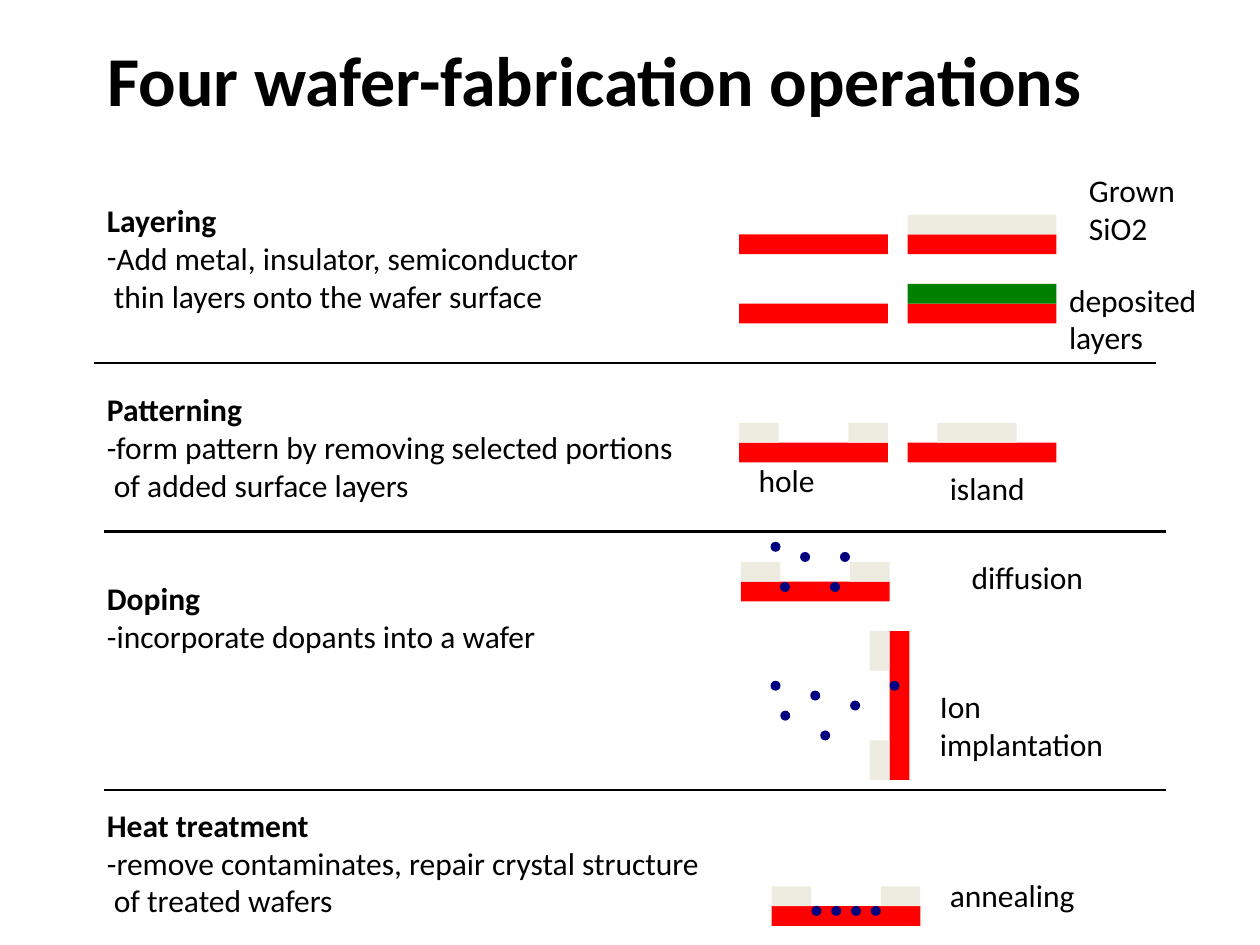
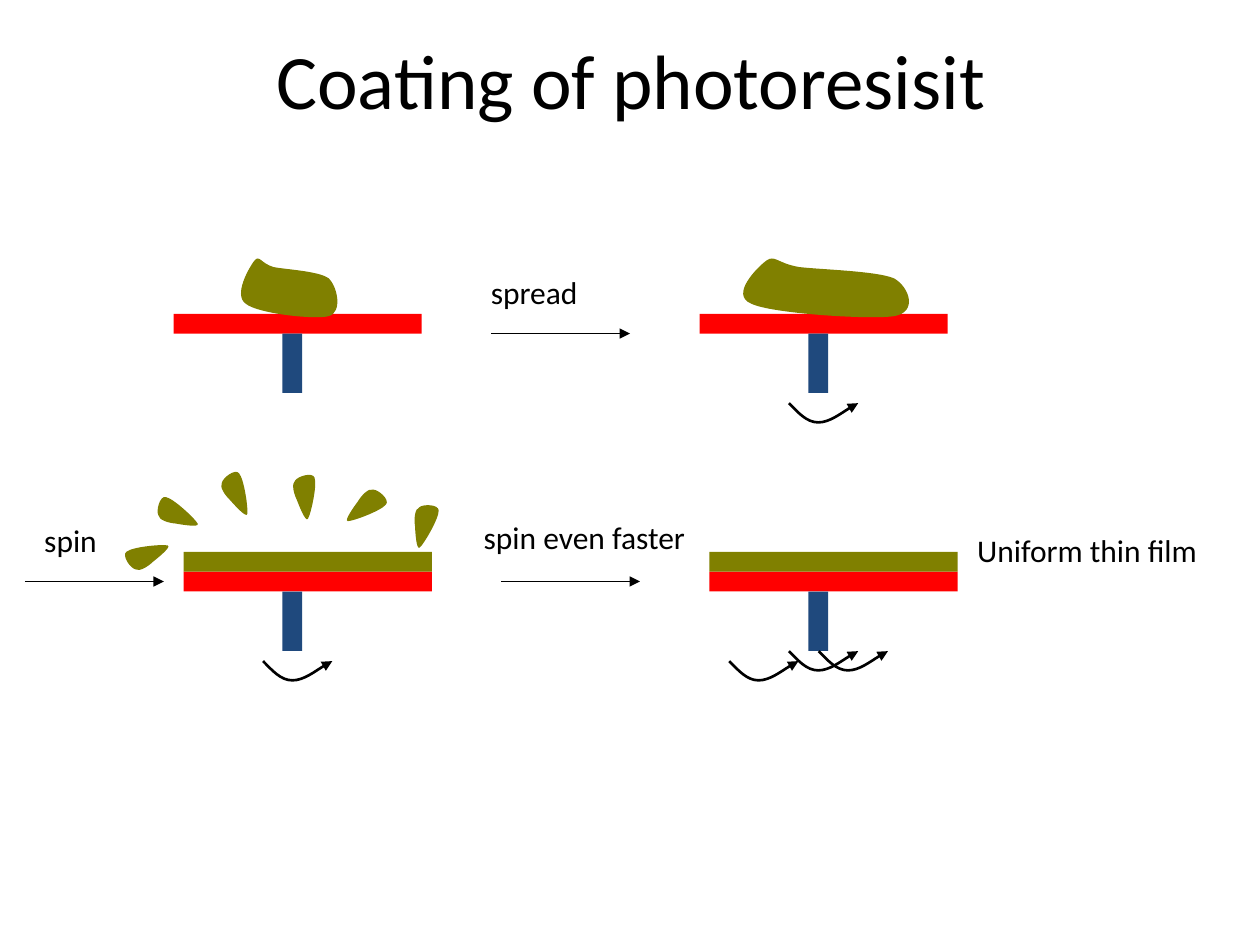
import dataclasses
from typing import Any, NamedTuple

import lxml.etree
import pptx
import pptx.dml.color
import pptx.enum.shapes
import pptx.enum.text
import pptx.oxml.ns
import pptx.util

Pt = pptx.util.Pt
qn = pptx.oxml.ns.qn
Shapes = pptx.enum.shapes.MSO_SHAPE


@dataclasses.dataclass(frozen=True)
class Theme:
    font: str = "Calibri"
    body_size: float = 18
    ink: str = "000000"
    wafer: str = "FF0000"
    oxide: str = "EEECE1"
    deposit: str = "008000"
    dopant: str = "000080"
    resist: str = "808000"
    shaft: str = "1F497D"
    thin: float = 0.75
    thick: float = 1.5


THEME = Theme()
LAYER = 11.3
WAFER_WIDTH = 85
POST_WIDTH = 22.6
DOT = 5.7
DISC_WIDTH = 141.8
SHAFT_HEIGHT = 34
LINE_PITCH = 21.6


class Title(NamedTuple):
    text: str
    left: float
    width: float
    size: float
    bold: bool = False


class Label(NamedTuple):
    text: str
    left: float
    top: float
    width: float


class Section(NamedTuple):
    heading: str
    action: str
    continuation: str = ""
    lines_before: int = 2
    bulleted: bool = False


class Spinner(NamedTuple):
    left: float
    top: float
    shaft_left: float
    coated: bool


class Droplet(NamedTuple):
    x: float
    y: float
    angle: float


class Curve(NamedTuple):
    start: tuple[float, float]
    controls: list[tuple[float, float]]


BLOB = Curve((23, 7.2), [
    (29.5, 8.6), (49, 9.4), (54.7, 13.7),
    (59.8, 18.7), (62.6, 33.1), (54.7, 35.3),
    (46.8, 37.4), (13.7, 33.8), (7.2, 28.1),
    (0, 23), (9.4, 7.2), (12.2, 3.6),
    (15.1, 0), (15.8, 5), (23, 7.2)])
DROPLET = Curve((12.4, -0.4), [
    (10.2, -2.2), (-6.3, -7.4), (-10.8, -6.1),
    (-14.2, -5.2), (-12.4, 3.3), (-10, 5.1),
    (-8.4, 7.4), (-2.8, 6.5), (1, 5),
    (4.4, 4), (14.2, 1.1), (12.4, -0.4)])
SPIN = Curve((0, 0), [(5, 5), (10, 11), (16.8, 11), (23.2, 11), (36, 1.5), (39.6, 0)])

SECTIONS = [
    Section("Layering", "Add metal, insulator, semiconductor",
            "thin layers onto the wafer surface", 0, True),
    Section("Patterning", "-form pattern by removing selected portions",
            "of added surface layers"),
    Section("Doping", "-incorporate dopants into a wafer"),
    Section("Heat treatment", "-remove contaminates, repair crystal structure",
            "of treated wafers", 4),
]
OPERATION_LABELS = [
    Label("Grown\nSiO2", 615.2, 94.3, 67.7),
    Label("deposited\nlayers", 603.8, 156.8, 97),
    Label("hole", 426.4, 260.2, 48),
    Label("island", 535.7, 264.4, 61),
    Label("diffusion", 548.2, 315.4, 81),
    Label("Ion\nimplantation", 530, 389, 111.6),
    Label("annealing", 535.7, 496.8, 92),
]
DIFFUSING = [(445.7, 332.6), (457.2, 315.4), (474.3, 332.6), (480, 315.4), (440.3, 309.6)]
IMPLANTED = [(440.3, 389), (508.3, 389), (463, 394.6),
             (445.9, 406.1), (468.7, 417.4), (485.8, 400.3)]
ANNEALED = [(463.7 + 11.3 * step, 517.7) for step in range(4)]
DIVIDERS = [(53.9, 207.4), (59.6, 303.9), (59.6, 451.4)]

SPINNERS = [
    Spinner(99.2, 179.3, 161.4, False),
    Spinner(399.8, 179.3, 462, False),
    Spinner(105, 326.7, 161.4, True),
    Spinner(405.4, 326.7, 462, True),
]
DROPLETS = [
    Droplet(101.7, 294.3, 26.1), Droplet(84.6, 316.8, 337.6),
    Droplet(135.6, 282.8, 64.8), Droplet(174.5, 284.2, 85.4),
    Droplet(208.3, 289.9, 142.5), Droplet(242.2, 300.8, 103.3),
]
SPINS = [(150.3, 377.8), (450.8, 230.4), (450.8, 372.1), (467.8, 372.1), (416.7, 377.8)]
STEP_ARROWS = [(280.6, 190.6), (286.3, 332.3), (14.2, 332.3)]
COATING_LABELS = [
    Label("spread", 273.4, 152.6, 70),
    Label("spin", 18.2, 294.3, 47.5),
    Label("spin even faster", 269.3, 292.3, 141.8),
    Label("Uniform thin film", 551.3, 299.7, 144.7),
]


def rgb(value: str) -> Any:
    return pptx.dml.color.RGBColor.from_string(value)


def style(para: Any, size: float = THEME.body_size, bold: bool = False) -> None:
    for span in para.runs:
        span.font.name = THEME.font
        span.font.size = Pt(size)
        span.font.bold = bold
        span.font.color.rgb = rgb(THEME.ink)


def add_text(page: Any, label: Label) -> Any:
    lines = label.text.split("\n")
    height = 7.2 + LINE_PITCH * len(lines)
    box = page.shapes.add_textbox(Pt(label.left), Pt(label.top), Pt(label.width), Pt(height))
    box.text_frame.word_wrap = False
    box.text_frame.text = label.text
    for para in box.text_frame.paragraphs:
        style(para)
    return box


def add_title(page: Any, title: Title) -> None:
    box = page.shapes.add_textbox(Pt(title.left), Pt(0), Pt(title.width), Pt(90))
    frame = box.text_frame
    frame.word_wrap = True
    frame.vertical_anchor = pptx.enum.text.MSO_ANCHOR.MIDDLE
    frame.text = title.text
    frame.paragraphs[0].alignment = pptx.enum.text.PP_ALIGN.CENTER
    style(frame.paragraphs[0], title.size, title.bold)


def add_sections(page: Any, sections: list[Section]) -> None:
    lines = [line for section in sections for line in section[:3] if line]
    box = add_text(page, Label("\n".join(lines), 54, 111.3, 380.2))
    box.height = Pt(418.3)
    paras = iter(box.text_frame.paragraphs)
    for section in sections:
        heading, action = next(paras), next(paras)
        style(heading, bold=True)
        if section.lines_before:
            heading.space_before = Pt(LINE_PITCH * section.lines_before)
        if section.bulleted:
            properties = action._p.get_or_add_pPr()
            lxml.etree.SubElement(properties, qn("a:buFont"), typeface=THEME.font)
            lxml.etree.SubElement(properties, qn("a:buChar"), char="-")
        if section.continuation:
            next(paras)._p.get_or_add_pPr().set("marL", str(Pt(4)))


def paint(shape: Any, color: str) -> None:
    shape.shadow.inherit = False
    shape.fill.solid()
    shape.fill.fore_color.rgb = rgb(color)
    shape.line.fill.background()


def add_block(page: Any, left: float, top: float, width: float, height: float,
              color: str, kind: Any = Shapes.RECTANGLE) -> None:
    paint(page.shapes.add_shape(kind, Pt(left), Pt(top), Pt(width), Pt(height)), color)


def add_wafer(page: Any, left: float, top: float) -> None:
    add_block(page, left, top, WAFER_WIDTH, LAYER, THEME.wafer)


def add_masked_wafer(page: Any, left: float, top: float) -> None:
    add_wafer(page, left, top)
    for post_left in (left, left + WAFER_WIDTH - POST_WIDTH):
        add_block(page, post_left, top - LAYER, POST_WIDTH, LAYER, THEME.oxide)


def add_upright_wafer(page: Any, left: float, top: float) -> None:
    add_block(page, left, top, LAYER, WAFER_WIDTH, THEME.wafer)
    for post_top in (top, top + WAFER_WIDTH - POST_WIDTH):
        add_block(page, left - LAYER, post_top, LAYER, POST_WIDTH, THEME.oxide)


def set_stroke(shape: Any, width: float, arrow: bool) -> None:
    shape.line.width = Pt(width)
    shape.line.color.rgb = rgb(THEME.ink)
    if arrow:
        outline = shape._element.spPr.find(qn("a:ln"))
        lxml.etree.SubElement(outline, qn("a:tailEnd"), type="triangle")


def add_rule(page: Any, left: float, top: float, length: float,
             width: float, arrow: bool = False) -> None:
    rule = page.shapes.add_connector(pptx.enum.shapes.MSO_CONNECTOR.STRAIGHT,
                                     Pt(left), Pt(top), Pt(left + length), Pt(top))
    set_stroke(rule, width, arrow)
    lxml.etree.SubElement(rule._element.spPr, qn("a:effectLst"))


def bend_segments(shape: Any) -> None:
    segments = list(shape._element.spPr.iter(qn("a:lnTo")))
    for first in range(0, len(segments), 3):
        bend = lxml.etree.Element(qn("a:cubicBezTo"))
        segments[first].addprevious(bend)
        for segment in segments[first:first + 3]:
            bend.append(segment[0])
            segment.getparent().remove(segment)


def add_curve(page: Any, curve: Curve, left: float, top: float,
              stretch: float = 1, closed: bool = True) -> Any:
    points = [(Pt(left + x * stretch), Pt(top + y)) for x, y in (curve.start, *curve.controls)]
    builder = page.shapes.build_freeform(*points[0])
    builder.add_line_segments(points[1:], close=closed)
    shape = builder.convert_to_shape()
    bend_segments(shape)
    return shape


def add_spinner(page: Any, spinner: Spinner) -> None:
    add_block(page, spinner.left, spinner.top, DISC_WIDTH, LAYER, THEME.wafer)
    add_block(page, spinner.shaft_left, spinner.top + LAYER, LAYER, SHAFT_HEIGHT, THEME.shaft)
    if spinner.coated:
        add_block(page, spinner.left, spinner.top - LAYER, DISC_WIDTH, LAYER, THEME.resist)


def build_operations(page: Any) -> None:
    add_title(page, Title("Four wafer-fabrication operations", 0, 679.2, 40, True))
    add_sections(page, SECTIONS)
    before, after = 422.4, 518.7
    for top, coating in ((133.9, THEME.oxide), (173.5, THEME.deposit)):
        add_wafer(page, before, top)
        add_wafer(page, after, top)
        add_block(page, after, top - LAYER, WAFER_WIDTH, LAYER, coating)
    add_masked_wafer(page, before, 252.9)
    add_wafer(page, after, 252.9)
    add_block(page, after + 17, 252.9 - LAYER, 2 * POST_WIDTH, LAYER, THEME.oxide)
    add_masked_wafer(page, 423.4, 332.4)
    add_upright_wafer(page, 508.3, 360.7)
    add_masked_wafer(page, 440.9, 517.8)
    for left, top in DIFFUSING + IMPLANTED + ANNEALED:
        add_block(page, left, top, DOT, DOT, THEME.dopant, Shapes.OVAL)
    for label in OPERATION_LABELS:
        add_text(page, label)
    for left, top in DIVIDERS:
        add_rule(page, left, top, 606.5, THEME.thick)


def build_coating(page: Any) -> None:
    add_title(page, Title("Coating of photoresisit", 36.7, 648, 44))
    for spinner in SPINNERS:
        add_spinner(page, spinner)
    for left, stretch in ((133.2, 1), (416.9, 1.72)):
        paint(add_curve(page, BLOB, left, 145.4, stretch), THEME.resist)
    for droplet in DROPLETS:
        shape = add_curve(page, DROPLET, droplet.x, droplet.y)
        shape.rotation = droplet.angle
        paint(shape, THEME.resist)
    for left, top in SPINS:
        spin = add_curve(page, SPIN, left, top, closed=False)
        spin.shadow.inherit = False
        spin.fill.background()
        set_stroke(spin, THEME.thick, True)
    for left, top in STEP_ARROWS:
        add_rule(page, left, top, 79.4, THEME.thin, True)
    for label in COATING_LABELS:
        add_text(page, label)


def main() -> None:
    deck = pptx.Presentation()
    deck.slide_width, deck.slide_height = Pt(720), Pt(540)
    for build in (build_operations, build_coating):
        build(deck.slides.add_slide(deck.slide_layouts[6]))
    deck.save("out.pptx")


if __name__ == "__main__":
    main()
